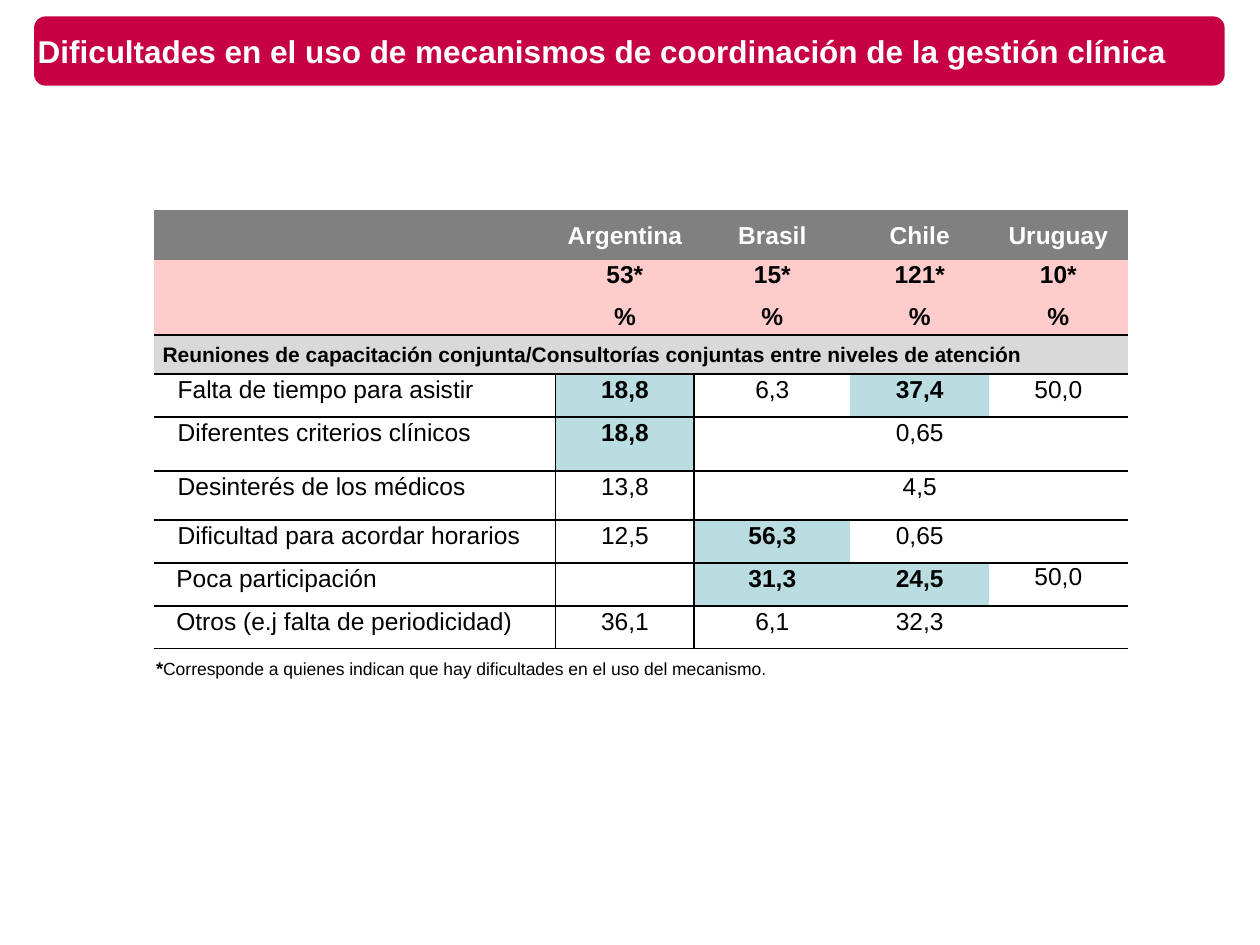
from lxml import etree
from pptx import Presentation, util as u
from pptx.dml.color import RGBColor
from pptx.enum import shapes, text
from pptx.oxml.ns import qn

Inches, Pt = u.Inches, u.Pt
PLAIN = "{2D5ABB26-0587-4C30-8999-92F81FD0307C}"  # no style, no grid
BLACK, WHITE, TEAL = "000000", "FFFFFF", "BADDE1"
COLS = [3.19, 1.1, 1.24, 1.1, 1.1]
ROWS = [0.39, 0.31, 0.29, 0.31, 0.34, 0.43, 0.39, 0.34, 0.34, 0.34]
HEAD = ["", "Argentina", "Brasil", "Chile", "Uruguay"]
COUNTS = ["", "53*", "15*", "121*", "10*"]
UNITS = ["", "%", "%", "%", "%"]
SECTION = "Reuniones de capacitación conjunta/Consultorías conjuntas entre niveles de atención"
# Label, indent, values by country, highlighted columns
DATA = [
    ("Falta de tiempo para asistir", 0.12, ["18,8", "6,3", "37,4", "50,0"], {1, 3}),
    ("Diferentes criterios clínicos", 0.12, ["18,8", "", "0,65", ""], {1}),
    ("Desinterés de los médicos", 0.12, ["13,8", "", "4,5", ""], set()),
    ("Dificultad para acordar horarios", 0.12, ["12,5", "56,3", "0,65", ""], {2}),
    ("Poca participación", 0.11, ["", "31,3", "24,5", "50,0"], {2, 3}),
    ("Otros (e.j falta de periodicidad)", 0.11, ["36,1", "6,1", "32,3", ""], set()),
]


def paint(fill, color):
    fill.solid()
    fill.fore_color.rgb = RGBColor.from_string(color)


def style(run, size, color=BLACK, bold=False):
    font = run.font
    font.name, font.size, font.bold = "Arial", Pt(size), bold
    font.color.rgb = RGBColor.from_string(color)


def add_text(slide, box, parts):
    """Place one line of (words, size, color, bold) parts, centred vertically."""
    frame = slide.shapes.add_textbox(*map(Inches, box)).text_frame
    frame.word_wrap = True
    frame.vertical_anchor = text.MSO_ANCHOR.MIDDLE
    for words, *look in parts:
        run = frame.paragraphs[0].add_run()
        run.text = words
        style(run, *look)


def add_title(slide, box):
    bar = slide.shapes.add_shape(shapes.MSO_SHAPE.ROUNDED_RECTANGLE, *map(Inches, box))
    bar.shadow.inherit = False
    bar.adjustments[0] = 0.167
    paint(bar.fill, "C70044")
    bar.line.fill.background()
    left, top, _, high = box
    words = "Dificultades en el uso de mecanismos de coordinación de la gestión clínica"
    add_text(slide, (left - 0.07, top, 9.88, high), [(words, 18, WHITE, True)])


def add_edges(cell, sides):
    """Rule the given sides, named in the order L, R, T, B."""
    props = cell._tc.get_or_add_tcPr()
    for side in sides:
        line = etree.SubElement(props, qn(f"a:ln{side}"), w=str(Pt(1)))
        fill = etree.SubElement(line, qn("a:solidFill"))
        etree.SubElement(fill, qn("a:srgbClr"), val=BLACK)


def fill_cell(cell, words, fill=None, size=14, color=BLACK, bold=False,
              edges="", middle=False, tight=False, left=False, indent=0, space=1.07):
    add_edges(cell, edges)
    if fill:
        paint(cell.fill, fill)
    cell.margin_left = cell.margin_right = Inches(0.01 if tight else 0.07)
    cell.margin_top = Inches(0.01 if tight else 0)
    cell.margin_bottom = 0
    cell.vertical_anchor = text.MSO_ANCHOR.MIDDLE if middle else text.MSO_ANCHOR.TOP
    para = cell.text_frame.paragraphs[0]
    para.alignment = text.PP_ALIGN.LEFT if left else text.PP_ALIGN.CENTER
    para.line_spacing = space
    if indent:
        para._p.get_or_add_pPr().set("marL", str(Inches(indent)))
    if words:
        para.text = words
        style(para.runs[0], size, color, bold)
    else:
        # An empty cell keeps its row low only with a set text size
        etree.SubElement(para._p, qn("a:endParaRPr"), sz=str(size * 100))


def add_grid(slide, box):
    frame = slide.shapes.add_table(len(ROWS), len(COLS), *map(Inches, box))
    table = frame.table
    table.first_row = table.horz_banding = False
    table._tbl.tblPr.find(qn("a:tableStyleId")).text = PLAIN
    for col, wide in zip(table.columns, COLS):
        col.width = Inches(wide)
    for row, high in zip(table.rows, ROWS):
        row.height = Inches(high)

    caps = {"bold": True, "middle": True, "tight": True, "space": 1.0}
    for c in range(len(COLS)):
        fill_cell(table.cell(0, c), HEAD[c], "808080", color=WHITE, **caps)
        fill_cell(table.cell(1, c), COUNTS[c], "FFCCCC", bold=True)
        fill_cell(table.cell(2, c), UNITS[c], "FFCCCC", edges="B", **caps)

    table.cell(3, 0).merge(table.cell(3, len(COLS) - 1))
    for c in range(len(COLS)):
        fill_cell(table.cell(3, c), "" if c else SECTION, "D9D9D9", size=12,
                  bold=True, edges="TB", middle=True, left=True)

    for r, (label, indent, values, marks) in enumerate(DATA, 4):
        fill_cell(table.cell(r, 0), label, edges="RTB", left=True, indent=indent)
        for c, value in enumerate(values, 1):
            fill_cell(table.cell(r, c), value, TEAL if c in marks else WHITE,
                      bold=c in marks, edges="LTB" if c == 1 else "TB",
                      space=1.0 if (label, c) == ("Poca participación", 4) else 1.07)


def add_note(slide, box):
    words = "Corresponde a quienes indican que hay dificultades en el uso del mecanismo."
    add_text(slide, box, [("*", 10.5, BLACK, True), (words, 10, BLACK, False)])


def main():
    deck = Presentation()
    deck.slide_width, deck.slide_height = Inches(10), Inches(7.5)
    slide = deck.slides.add_slide(deck.slide_layouts[6])
    add_title(slide, (0.27, 0.13, 9.45, 0.55))
    add_grid(slide, (1.22, 1.67, sum(COLS), sum(ROWS)))
    add_note(slide, (1.14, 5.12, 9.52, 0.36))
    deck.save("out.pptx")


if __name__ == "__main__":
    main()
